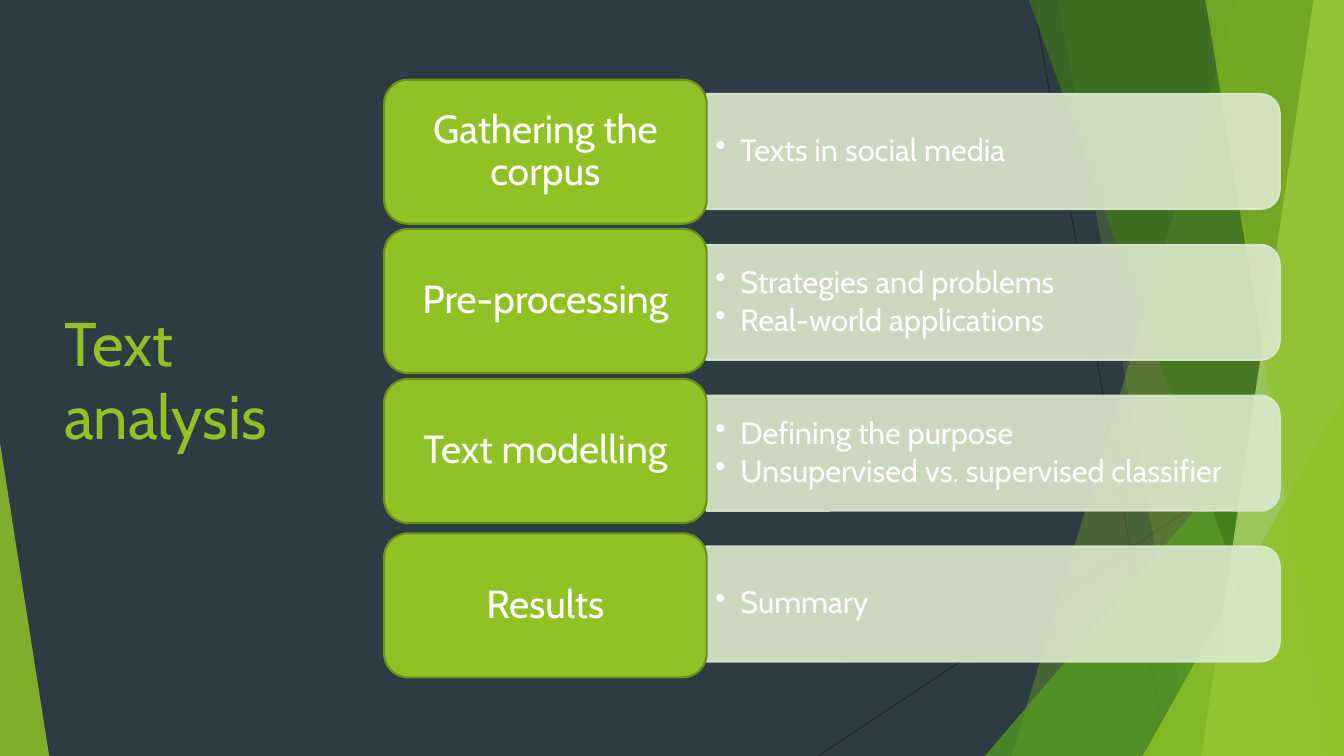
from lxml import etree
from pptx import Presentation
from pptx.dml.color import RGBColor
from pptx.enum.shapes import MSO_CONNECTOR, MSO_SHAPE
from pptx.enum.text import MSO_ANCHOR, PP_ALIGN
from pptx.oxml.ns import qn
from pptx.util import Cm, Pt

STRAIGHT = MSO_CONNECTOR.STRAIGHT
TRIANGLE = MSO_SHAPE.ISOSCELES_TRIANGLE
ROUNDED = MSO_SHAPE.ROUNDED_RECTANGLE
TWO_ROUNDED = MSO_SHAPE.ROUND_2_SAME_RECTANGLE
MIDDLE = MSO_ANCHOR.MIDDLE
LEFT = PP_ALIGN.LEFT
CENTER = PP_ALIGN.CENTER

SLATE = RGBColor(0x2C, 0x3C, 0x43)
CHARCOAL = RGBColor(0x26, 0x26, 0x26)
LIME = RGBColor(0x90, 0xC2, 0x26)
OLIVE = RGBColor(0x6B, 0x90, 0x1C)
GRASS = RGBColor(0x54, 0xA0, 0x21)
FOREST = RGBColor(0x3F, 0x78, 0x19)
PALE_LIME = RGBColor(0xC0, 0xE4, 0x74)
MIST = RGBColor(0xDB, 0xE9, 0xCD)
WHITE = RGBColor(0xFF, 0xFF, 0xFF)

WIDTH, HEIGHT = 33.87, 19.05


def paint(shape, colour, opacity=100, outline=None):
    shape.shadow.inherit = False
    shape.fill.solid()
    shape.fill.fore_color.rgb = colour
    if outline is None:
        shape.line.fill.background()
    else:
        shape.line.color.rgb = outline
        shape.line.width = Pt(1.5)
    if opacity < 100:
        for tint in list(shape.element.spPr.iter(qn("a:srgbClr"))):
            etree.SubElement(tint, qn("a:alpha")).set("val", str(opacity * 1000))


def write(box, lines, size, colour=WHITE, align=LEFT, spacing=None, gap=0,
          bullet=None, inset=(0.25, 0.13)):
    frame = box.text_frame
    frame.word_wrap = True
    frame.vertical_anchor = MIDDLE
    frame.margin_left = frame.margin_right = Cm(inset[0])
    frame.margin_top = frame.margin_bottom = Cm(inset[1])
    for index, line in enumerate(lines):
        para = frame.add_paragraph() if index else frame.paragraphs[0]
        para.text = line
        para.alignment = align
        if spacing:
            para.line_spacing = spacing
        if index:
            para.space_before = Pt(gap)
        if bullet:
            properties = para._p.get_or_add_pPr()
            properties.set("marL", str(Cm(0.63)))
            properties.set("indent", str(-Cm(0.63)))
            etree.SubElement(properties, qn("a:buChar")).set("char", bullet)
        for span in para.runs:
            span.font.name = "Cabin"
            span.font.size = Pt(size)
            span.font.color.rgb = colour


deck = Presentation()
deck.slide_width, deck.slide_height = Cm(WIDTH), Cm(HEIGHT)
page = deck.slides.add_slide(deck.slide_layouts[6])
page.background.fill.solid()
page.background.fill.fore_color.rgb = SLATE
shapes = page.shapes

for ends in [(26.04, 0, 29.41, HEIGHT), (WIDTH, 10.24, 20.62, HEIGHT)]:
    hairline = shapes.add_connector(STRAIGHT, *[Cm(value) for value in ends])
    hairline.line.color.rgb = CHARCOAL
    hairline.line.width = Pt(0.75)
    etree.SubElement(hairline.element.spPr, qn("a:effectLst"))

facets = [
    ("band", (31.19, 25.5), LIME, 30),
    ("band", (26.67, 30.05), LIME, 20),
    ("corner", (24.82, 8.46, WIDTH, 1), GRASS, 72),
    ("band", (25.93, 32.79), FOREST, 70),
    ("band", (33.1, 30.28), PALE_LIME, 70),
    ("band", (30.38, 33.48), LIME, 65),
    ("corner", (28.8, 9.98, WIDTH, 1), LIME, 80),
    ("corner", (0, 11.15, 1.24, 0), LIME, 85),
]
for kind, place, colour, opacity in facets:
    if kind == "band":
        top_x, bottom_x = place
        outline = shapes.build_freeform(Cm(top_x), 0)
        outline.add_line_segments([
            (Cm(WIDTH), 0), (Cm(WIDTH), Cm(HEIGHT)), (Cm(bottom_x), Cm(HEIGHT))])
        facet = outline.convert_to_shape()
    else:
        left, top, right, apex = place
        facet = shapes.add_shape(
            TRIANGLE, Cm(left), Cm(top), Cm(right - left), Cm(HEIGHT - top))
        facet.adjustments[0] = apex
    paint(facet, colour, opacity)

title = shapes.add_textbox(Cm(1.37), Cm(6.55), Cm(7.16), Cm(5.97))
write(title, ["Text\vanalysis"], 44, colour=LIME)

steps = [
    ("Gathering the corpus", 2.01, ["Texts in social media"]),
    ("Pre-processing", 5.77, ["Strategies and problems", "Real-world applications"]),
    ("Text modelling", 9.55,
     ["Defining the purpose", "Unsupervised vs. supervised classifier"]),
    ("Results", 13.44, ["Summary"]),
]
PANEL_LEFT, PANEL_LENGTH, PANEL_DEPTH = 17.8, 14.45, 2.9
for row, (step, step_top, details) in enumerate(steps):
    middle = 3.82 + 3.8 * row
    panel = shapes.add_shape(
        TWO_ROUNDED,
        Cm(PANEL_LEFT + (PANEL_LENGTH - PANEL_DEPTH) / 2),
        Cm(middle - PANEL_LENGTH / 2),
        Cm(PANEL_DEPTH), Cm(PANEL_LENGTH))
    panel.rotation = 90
    paint(panel, MIST, opacity=90, outline=MIST)

    notes = shapes.add_textbox(
        Cm(PANEL_LEFT), Cm(middle - 1.31), Cm(14.3), Cm(2.62))
    write(notes, details, 22, spacing=0.9, gap=3.3, bullet="•", inset=(0.23, 0.13))

    label = shapes.add_shape(ROUNDED, Cm(9.68), Cm(step_top), Cm(8.13), Cm(3.63))
    paint(label, LIME, outline=OLIVE)
    write(label, [step], 28, align=CENTER, spacing=0.9, inset=(0.48, 0.33))

deck.save("out.pptx")
